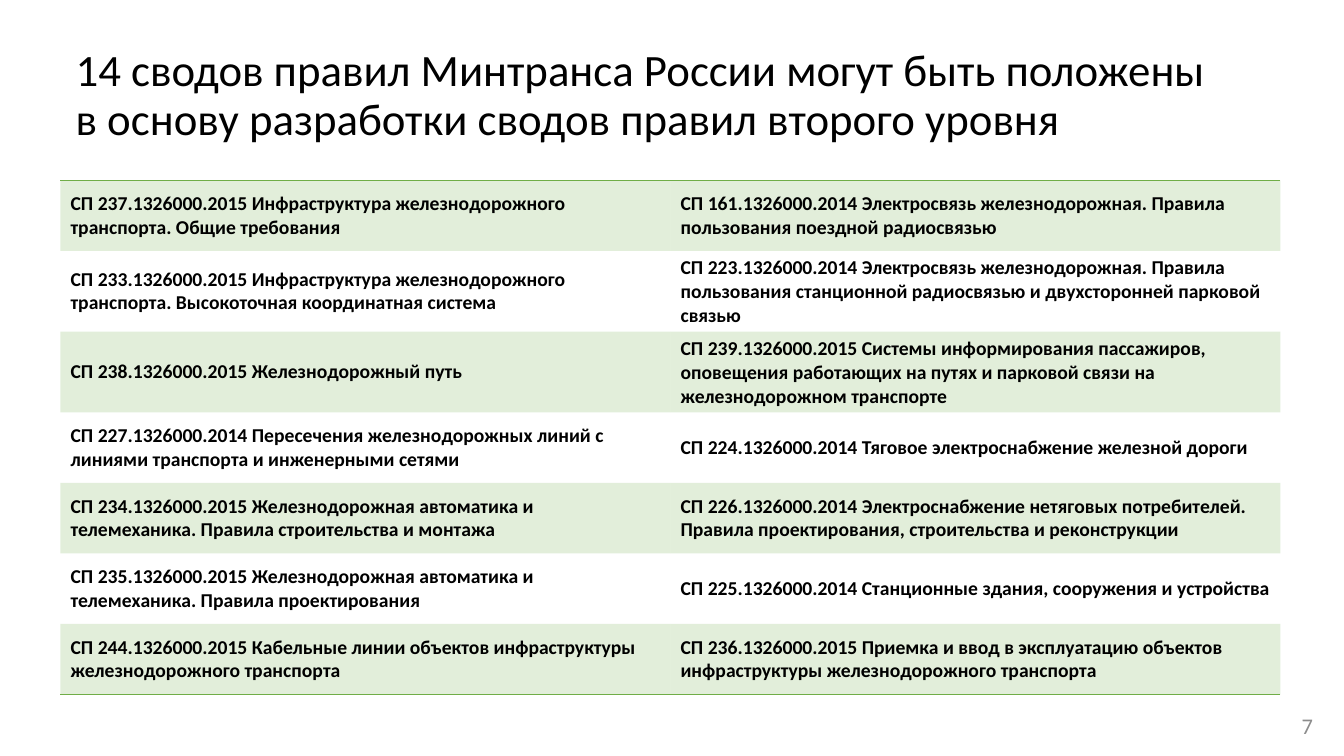
from lxml import etree
from pptx import Presentation
from pptx.dml.color import RGBColor
from pptx.enum.text import MSO_ANCHOR, MSO_AUTO_SIZE, PP_ALIGN
from pptx.oxml import parse_xml
from pptx.oxml.ns import nsdecls, qn
from pptx.util import Inches, Pt

MIDDLE = MSO_ANCHOR.MIDDLE
NO_AUTOFIT = MSO_AUTO_SIZE.NONE
LEFT, RIGHT = PP_ALIGN.LEFT, PP_ALIGN.RIGHT
BLACK = RGBColor(0x00, 0x00, 0x00)
GREY = RGBColor(0x8C, 0x8C, 0x8C)
GREEN = RGBColor(0x70, 0xAD, 0x47)
FONT = "Calibri"
PLAIN_TABLE_STYLE = "{2D5ABB26-0587-4C30-8999-92F81FD0307C}"
ROW_HEIGHT = 0.7

TITLE = ("14 сводов правил Минтранса России могут быть положены "
         "в основу разработки сводов правил второго уровня")
RULES = [
    ("СП 237.1326000.2015 Инфраструктура железнодорожного транспорта. Общие требования",
     "СП 161.1326000.2014 Электросвязь железнодорожная. Правила пользования поездной радиосвязью"),
    ("СП 233.1326000.2015 Инфраструктура железнодорожного транспорта. "
     "Высокоточная координатная система",
     "СП 223.1326000.2014 Электросвязь железнодорожная. Правила пользования "
     "станционной радиосвязью и двухсторонней парковой связью"),
    ("СП 238.1326000.2015 Железнодорожный путь",
     "СП 239.1326000.2015 Системы информирования пассажиров, оповещения работающих "
     "на путях и парковой связи на железнодорожном транспорте"),
    ("СП 227.1326000.2014 Пересечения железнодорожных линий с линиями транспорта "
     "и инженерными сетями",
     "СП 224.1326000.2014 Тяговое электроснабжение железной дороги"),
    ("СП 234.1326000.2015 Железнодорожная автоматика и телемеханика. "
     "Правила строительства и монтажа",
     "СП 226.1326000.2014 Электроснабжение нетяговых потребителей. "
     "Правила проектирования, строительства и реконструкции"),
    ("СП 235.1326000.2015 Железнодорожная автоматика и телемеханика. Правила проектирования",
     "СП 225.1326000.2014 Станционные здания, сооружения и устройства"),
    ("СП 244.1326000.2015 Кабельные линии объектов инфраструктуры железнодорожного транспорта",
     "СП 236.1326000.2015 Приемка и ввод в эксплуатацию объектов инфраструктуры "
     "железнодорожного транспорта"),
]


def style_paragraph(p, size, color, align=LEFT, bold=False):
    """Set the font and alignment of a paragraph."""
    p.alignment = align
    p.font.name, p.font.size, p.font.bold = FONT, Pt(size), bold
    p.font.color.rgb = color


def add_title(s, text):
    """Fill and place the title placeholder."""
    title = s.shapes.title
    title.left, title.top = Inches(0.65), Inches(0.37)
    title.width, title.height = Inches(11.44), Inches(1.17)
    tf = title.text_frame
    tf.text = text
    tf.word_wrap, tf.auto_size, tf.vertical_anchor = True, NO_AUTOFIT, MIDDLE
    p = tf.paragraphs[0]
    p.line_spacing = 0.9
    style_paragraph(p, 32, BLACK)


def add_page_number(s, number):
    """Write the page number in the bottom right corner."""
    tf = s.shapes.add_textbox(Inches(10.12), Inches(7), Inches(3), Inches(0.4)).text_frame
    tf.text = number
    tf.word_wrap, tf.vertical_anchor = True, MIDDLE
    style_paragraph(tf.paragraphs[0], 16, GREY, RIGHT)


def tint_cell(cell):
    """Fill a cell with translucent green."""
    cell.fill.solid()
    cell.fill.fore_color.rgb = GREEN
    color = cell._tc.tcPr.find(f".//{qn('a:srgbClr')}")
    etree.SubElement(color, qn("a:alpha")).set("val", "20000")


def rule_cell(cell, side):
    """Draw a green border on one side of a cell."""
    cell._tc.get_or_add_tcPr().insert(0, parse_xml(
        f'<a:{side} {nsdecls("a")} w="{Pt(1)}"><a:solidFill>'
        f'<a:srgbClr val="{GREEN}"/></a:solidFill></a:{side}>'))


def add_rules_table(s, rows):
    """Add the banded table with rules above and below."""
    table = s.shapes.add_table(len(rows), 2, Inches(0.6), Inches(1.79), Inches(12.1),
                               Inches(ROW_HEIGHT * len(rows))).table
    table.first_row = table.horz_banding = False
    table._tbl.tblPr.find(qn("a:tableStyleId")).text = PLAIN_TABLE_STYLE
    for i, row in enumerate(rows):
        for j, text in enumerate(row):
            cell = table.cell(i, j)
            cell.text, cell.vertical_anchor = text, MIDDLE
            style_paragraph(cell.text_frame.paragraphs[0], 14, BLACK, bold=True)
            if i % 2 == 0:
                tint_cell(cell)
            if i == 0:
                rule_cell(cell, "lnT")
            if i == len(rows) - 1:
                rule_cell(cell, "lnB")


def main():
    """Build and save the slide."""
    prs = Presentation()
    prs.slide_width, prs.slide_height = Inches(13.33), Inches(7.5)
    s = prs.slides.add_slide(prs.slide_layouts[5])
    add_title(s, TITLE)
    add_page_number(s, "7")
    add_rules_table(s, RULES)
    prs.save("out.pptx")


if __name__ == "__main__":
    main()
